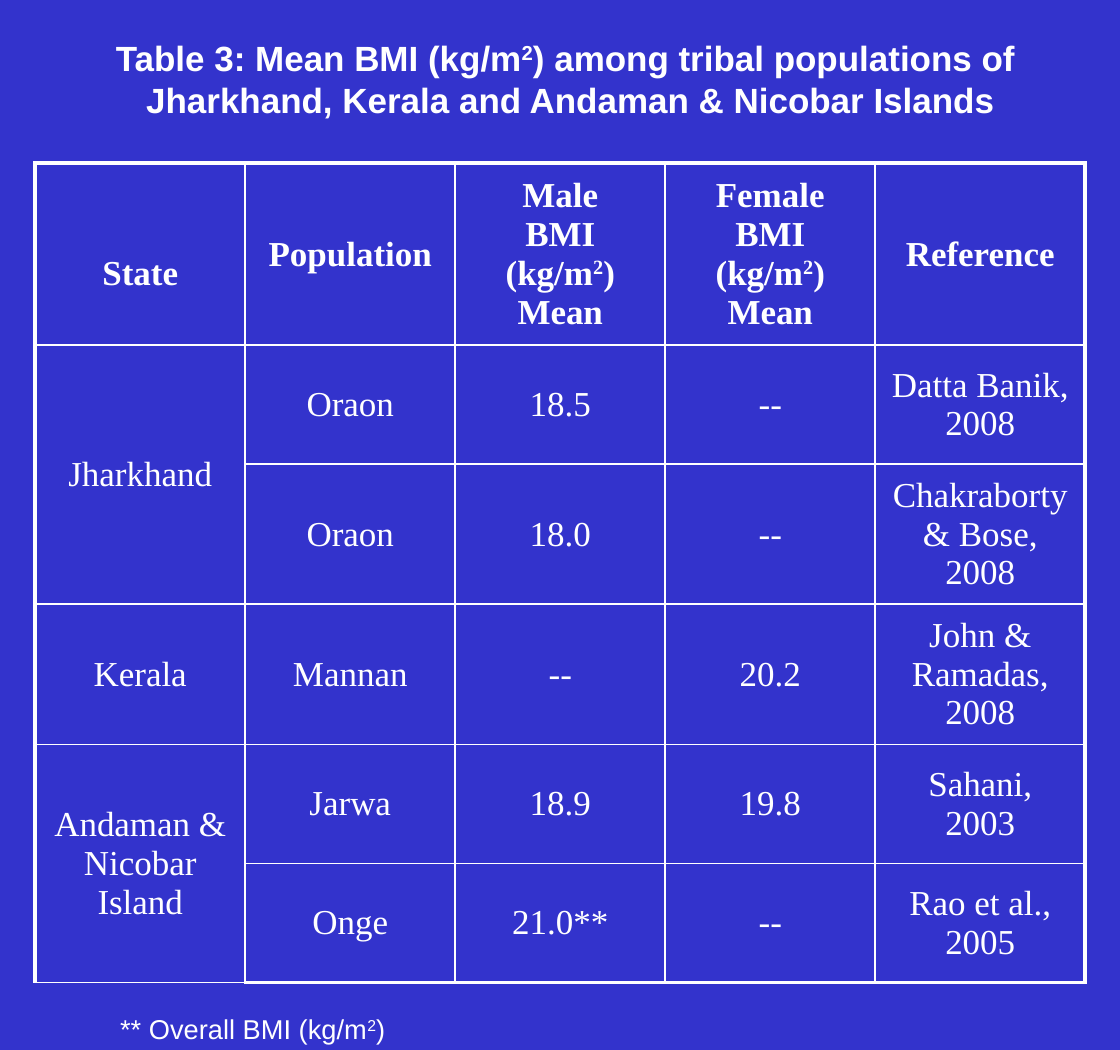
from lxml.etree import SubElement
from pptx import Presentation
from pptx.dml.color import RGBColor
from pptx.enum.text import MSO_ANCHOR, MSO_AUTO_SIZE, PP_ALIGN
from pptx.oxml.ns import qn
from pptx.util import Cm, Pt

# Content: "²" is set as a raised 2
TITLE = ("Table 3: Mean BMI (kg/m²) among tribal populations of \n"
         "Jharkhand, Kerala and Andaman & Nicobar Islands")
FOOTNOTE = "** Overall BMI (kg/m²)"
HEADER = ["State", "Population", "Male\nBMI (kg/m²)\nMean",
          "Female\nBMI (kg/m²)\nMean", "Reference"]
STUDIES = {
    "Jharkhand": [
        ("Oraon", "18.5", "--", "Datta Banik, 2008"),
        ("Oraon", "18.0", "--", "Chakraborty & Bose, 2008"),
    ],
    "Kerala": [("Mannan", "--", "20.2", "John & Ramadas, 2008")],
    "Andaman & Nicobar Island": [
        ("Jarwa", "18.9", "19.8", "Sahani, 2003"),
        ("Onge", "21.0**", "--", "Rao et al., 2005"),
    ],
}
COLORS = {"background": "3333CC", "text": "FFFFFF", "border": "FFFFFF"}
COLUMN_WIDTH = Cm(3.81)
ROW_HEIGHTS = [Cm(height) for height in (3.3, 2.16, 2.54, 2.54, 2.16, 2.16)]
INNER_LINE, OUTER_LINE = Pt(1), Pt(2.25)


def write(text_frame, text, font_name, size, bold=False, align=PP_ALIGN.CENTER):
    text_frame.text = ""
    for number, line in enumerate(text.split("\n")):
        paragraph = text_frame.add_paragraph() if number else text_frame.paragraphs[0]
        paragraph.alignment = align
        before, raised, after = line.partition("²")
        for part in filter(None, (before, raised, after)):
            run = paragraph.add_run()
            run.text = "2" if part == "²" else part
            run.font.name, run.font.size, run.font.bold = font_name, Pt(size), bold
            run.font.color.rgb = RGBColor.from_string(COLORS["text"])
            if part == "²":
                run.font._element.set("baseline", "30000")


def add_text(slide, box, text, size, **style):
    shape = slide.shapes.add_textbox(*(Cm(value) for value in box))
    text_frame = shape.text_frame
    text_frame.word_wrap = False
    text_frame.auto_size = MSO_AUTO_SIZE.SHAPE_TO_FIT_TEXT
    text_frame.vertical_anchor = MSO_ANCHOR.MIDDLE
    write(text_frame, text, "Arial", size, **style)
    return text_frame


def set_borders(cell, row, column, last_row, last_column):
    properties = cell._tc.get_or_add_tcPr()
    outer_sides = {"lnL": column == 0, "lnR": column == last_column,
                   "lnT": row == 0, "lnB": row == last_row}
    for position, (side, is_outer) in enumerate(outer_sides.items()):
        line = SubElement(properties, qn(f"a:{side}"),
                          w=str(OUTER_LINE if is_outer else INNER_LINE))
        fill = SubElement(line, qn("a:solidFill"))
        SubElement(fill, qn("a:srgbClr"), val=COLORS["border"])
        properties.insert(position, line)


presentation = Presentation()
presentation.slide_width, presentation.slide_height = Cm(20.32), Cm(19.05)
slide = presentation.slides.add_slide(presentation.slide_layouts[6])
slide.background.fill.solid()
slide.background.fill.fore_color.rgb = RGBColor.from_string(COLORS["background"])

# Footnote with a first-line indent, and title
footnote = add_text(slide, (0.66, 18.24, 6.58, 0.84), FOOTNOTE, 14, align=PP_ALIGN.LEFT)
footnote.paragraphs[0]._p.get_or_add_pPr().set("indent", str(Cm(1.27)))
add_text(slide, (1.75, 0.3, 17.2, 2.24), TITLE, 18, bold=True)

# Table: each state is named in the first of its rows
rows = [HEADER]
for state, studies in STUDIES.items():
    rows += [(state if not number else "", *study) for number, study in enumerate(studies)]
table = slide.shapes.add_table(
    len(rows), len(HEADER), Cm(0.64), Cm(2.96),
    COLUMN_WIDTH * len(HEADER), sum(ROW_HEIGHTS)).table
table.first_row = table.horz_banding = False
for column in table.columns:
    column.width = COLUMN_WIDTH
for row, height in zip(table.rows, ROW_HEIGHTS):
    row.height = height

for row, values in enumerate(rows):
    for column, value in enumerate(values):
        cell = table.cell(row, column)
        cell.fill.background()
        cell.vertical_anchor = MSO_ANCHOR.MIDDLE
        write(cell.text_frame, value, "Times New Roman", 18, bold=row == 0)
        set_borders(cell, row, column, len(rows) - 1, len(HEADER) - 1)
table.cell(0, 0).margin_top = Cm(0.84)  # "State" sits below the other headings

# One state cell across all of its studies
first = 1
for studies in STUDIES.values():
    last = first + len(studies) - 1
    if last > first:
        table.cell(first, 0).merge(table.cell(last, 0))
    first = last + 1

presentation.save("out.pptx")
